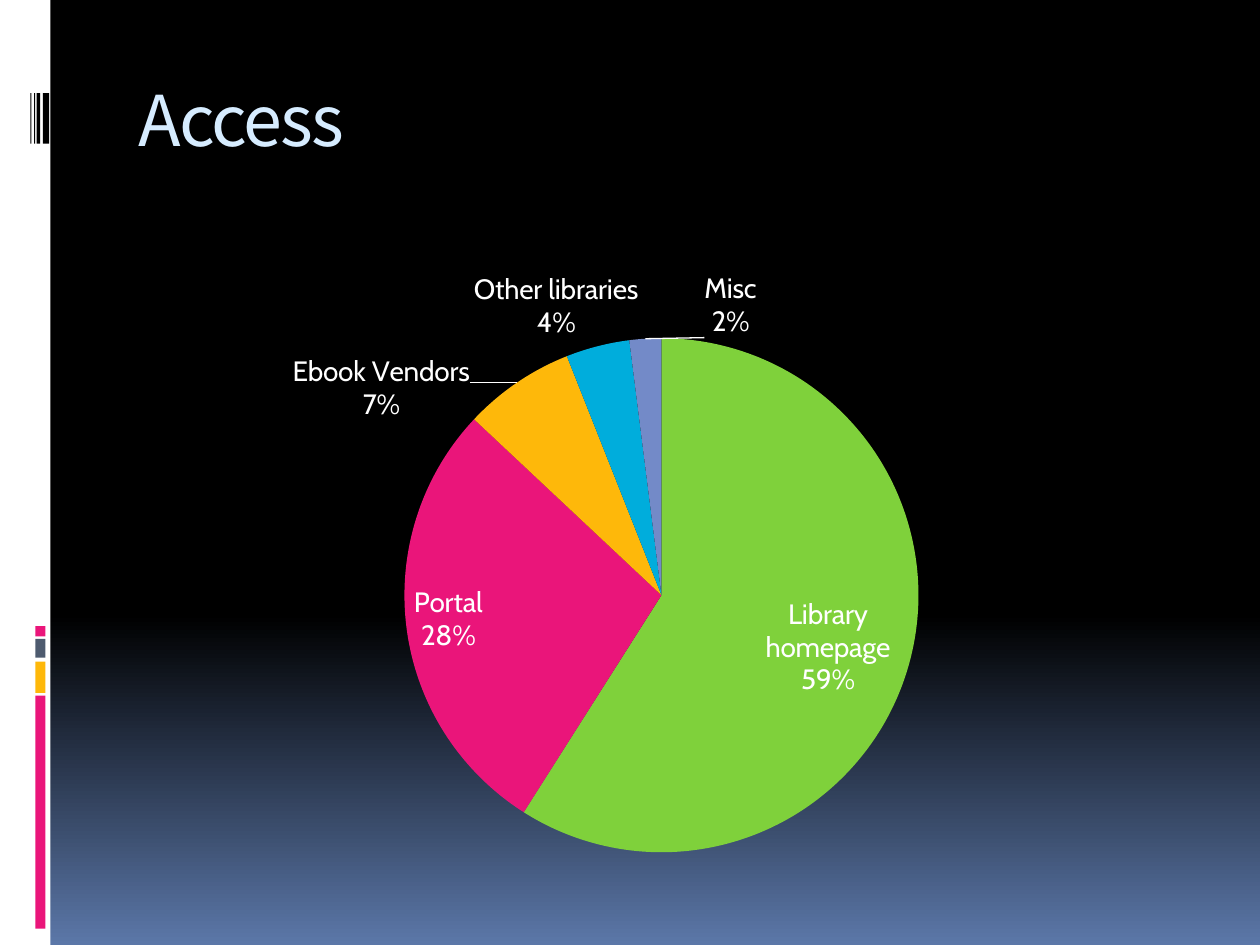
from pptx import Presentation
from pptx.chart.data import CategoryChartData
from pptx.dml.color import RGBColor
from pptx.enum.chart import XL_CHART_TYPE
from pptx.enum.shapes import MSO_SHAPE
from pptx.enum.text import MSO_ANCHOR
from pptx.oxml import parse_xml
from pptx.oxml.ns import nsdecls
from pptx.util import Inches, Pt

PIE = XL_CHART_TYPE.PIE
RECT = MSO_SHAPE.RECTANGLE
TOP = MSO_ANCHOR.TOP

WIDE, HIGH = 10, 7.5
THEME = {
    "white": "FFFFFF", "black": "000000", "pink": "EA157A", "gold": "FEB80A",
    "slate": "4E5B6F", "dusk": "5B77A8", "title": "D6ECFF", "green": "7FD13B",
    "cyan": "00ADDC", "blue": "738AC8",
    "head": "Noto Sans CJK KR", "body": "Cabin", "head_size": 40, "label_size": 16,
}

TITLE = "Access"
# name, percent, colour, label place, label shift as shares of the chart
SLICES = [
    ("Library homepage", 59, "green", "inEnd", (-0.01, 0.05)),
    ("Portal", 28, "pink", "inEnd", (0, 0.04)),
    ("Ebook Vendors", 7, "gold", "outEnd", (-0.04, 0.07)),
    ("Other libraries", 4, "cyan", "outEnd", (0.04, 0)),
    ("Misc", 2, "blue", "outEnd", (0.08, 0.01)),
]
# colour, top, height
BLOCKS = [("pink", 5.52, 1.85), ("gold", 5.25, 0.25),
          ("slate", 5.07, 0.15), ("pink", 4.97, 0.08)]
# left, width
STRIPES = [(0.34, 0.05), (0.29, 0.03), (0.27, 0.01), (0.24, 0.01)]

BODY = (0.1 * WIDE, 0.26 * HIGH, 0.85 * WIDE, 5)
PLOT = {"x": 0.26, "y": 0.14, "w": 0.48, "h": 0.83}


def color(name):
    return RGBColor.from_string(THEME[name])


def box(area):
    return [Inches(v) for v in area]


def bar(slide, area, fill):
    shape = slide.shapes.add_shape(RECT, *box(area))
    shape.shadow.inherit = False
    shape.fill.solid()
    shape.fill.fore_color.rgb = color(fill)
    shape.line.fill.background()


def style(font, face, size, tint):
    font.name, font.size, font.bold = THEME[face], Pt(THEME[size]), False
    font.color.rgb = color(tint)


def write(slide, text, area, *, face, size, tint, track=0):
    frame = slide.shapes.add_textbox(*box(area)).text_frame
    frame.word_wrap = True
    frame.vertical_anchor = TOP
    run = frame.paragraphs[0].add_run()
    run.text = text
    style(run.font, face, size, tint)
    run.font._element.set("spc", str(track * 100))


def layout(values, inner=False):
    """Manual chart layout; inner fixes the plot area itself."""
    target = '<c:layoutTarget val="inner"/>' if inner else ""
    modes = '<c:xMode val="edge"/><c:yMode val="edge"/>' if inner else ""
    parts = "".join(f'<c:{k} val="{v}"/>' for k, v in values.items())
    return (f'<c:layout {nsdecls("c")}><c:manualLayout>{target}{modes}{parts}'
            "</c:manualLayout></c:layout>")


def label(index, place, shift):
    """Label with name and percent on two lines."""
    move = layout(dict(zip("xy", shift)))
    shows = "".join(
        f'<c:show{k} val="{int(k in ("CatName", "Percent"))}"/>'
        for k in ("LegendKey", "Val", "CatName", "SerName", "Percent", "BubbleSize"))
    return parse_xml(
        f'<c:dLbl {nsdecls("c")}><c:idx val="{index}"/>{move}'
        '<c:numFmt formatCode="0%" sourceLinked="0"/>'
        f'<c:dLblPos val="{place}"/>{shows}<c:separator>\n</c:separator></c:dLbl>')


def draw_pie(slide):
    data = CategoryChartData()
    data.categories = [row[0] for row in SLICES]
    data.add_series("Access", [row[1] for row in SLICES])
    chart = slide.shapes.add_chart(PIE, *box(BODY), data).chart
    chart.has_legend = chart.has_title = False
    style(chart.font, "body", "label_size", "white")

    plot = chart.plots[0]
    plot.vary_by_categories = True
    area = plot._element.getparent()
    for old in area.findall("{*}layout"):
        area.remove(old)
    area.insert(0, parse_xml(layout(PLOT, True)))

    series = plot.series[0]
    labels = series.data_labels
    labels.show_value = False
    labels.show_category_name = labels.show_percentage = True
    labels.number_format, labels.number_format_is_linked = "0%", False
    style(labels.font, "body", "label_size", "white")
    for i, (_, _, tint, place, shift) in enumerate(SLICES):
        fill = series.points[i].format.fill
        fill.solid()
        fill.fore_color.rgb = color(tint)
        labels._element.insert(i, label(i, place, shift))
    labels._element.append(parse_xml(
        f'<c:leaderLines {nsdecls("c", "a")}><c:spPr><a:ln w="9525"><a:solidFill>'
        f'<a:srgbClr val="{THEME["white"]}"/></a:solidFill></a:ln></c:spPr>'
        "</c:leaderLines>"))


def main():
    deck = Presentation()
    deck.slide_width, deck.slide_height = Inches(WIDE), Inches(HIGH)
    slide = deck.slides.add_slide(deck.slide_layouts[6])

    back = slide.background.fill
    back.gradient()
    back.gradient_angle = 270
    for stop, (tint, spot) in zip(back.gradient_stops, [("black", 0.65), ("dusk", 1)]):
        stop.color.rgb, stop.position = color(tint), spot

    bar(slide, (0, 0, 0.04 * WIDE, HIGH), "white")
    for tint, top, tall in BLOCKS:
        bar(slide, (0.28, top, 0.08, tall), tint)
    for left, wide in STRIPES:
        bar(slide, (left, 0.74, wide, 0.4), "black")

    write(slide, TITLE, (0.1 * WIDE, 0.56, 0.85 * WIDE, 1), face="head",
          size="head_size", tint="title", track=-1)
    draw_pie(slide)
    deck.save("out.pptx")


if __name__ == "__main__":
    main()
